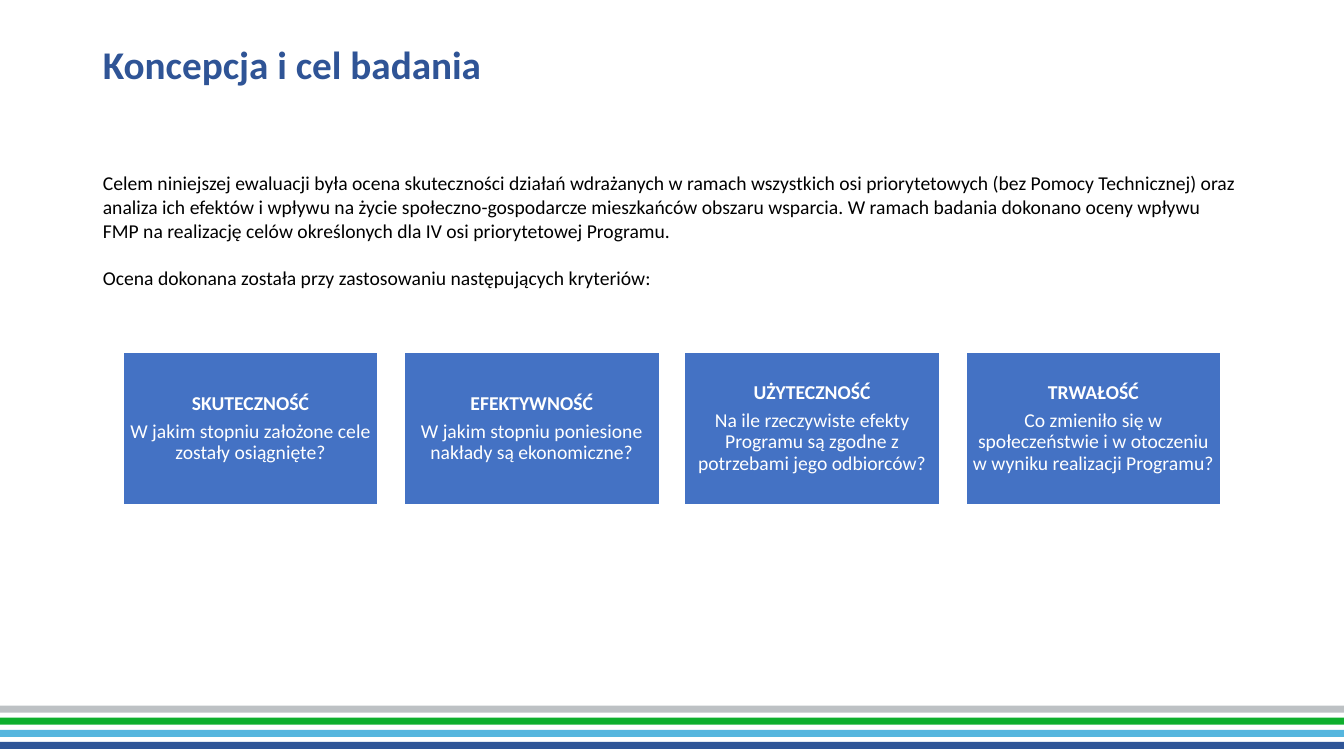
from lxml.etree import SubElement
from pptx import Presentation
from pptx.dml.color import RGBColor
from pptx.enum.shapes import MSO_SHAPE
from pptx.enum.text import MSO_ANCHOR, MSO_AUTO_SIZE, PP_ALIGN
from pptx.oxml.ns import qn
from pptx.util import Emu, Pt

EMU_PER_PX = 9144
SLIDE_WIDTH, SLIDE_HEIGHT = 1333, 750
FONT = "Calibri"

STRIPE_COLOURS = ["BDC1C4", "0EAF2D", "56B6DE", "2F5597"]
TITLE = "Koncepcja i cel badania"
BODY = [
    "Celem niniejszej ewaluacji była ocena skuteczności działań wdrażanych w ramach "
    "wszystkich osi priorytetowych (bez Pomocy Technicznej) oraz analiza ich efektów "
    "i wpływu na życie społeczno-gospodarcze mieszkańców obszaru wsparcia. W ramach "
    "badania dokonano oceny wpływu FMP na realizację celów określonych dla IV osi "
    "priorytetowej Programu.",
    "Ocena dokonana została przy zastosowaniu następujących kryteriów:",
]
CRITERIA = [
    ("SKUTECZNOŚĆ", "W jakim stopniu założone cele zostały osiągnięte?"),
    ("EFEKTYWNOŚĆ", "W jakim stopniu poniesione nakłady są ekonomiczne?"),
    ("UŻYTECZNOŚĆ", "Na ile rzeczywiste efekty Programu są zgodne z potrzebami jego odbiorców?"),
    ("TRWAŁOŚĆ", "Co zmieniło się w społeczeństwie i w otoczeniu w wyniku realizacji Programu?"),
]


def px(length):
    """Turn a length in px into EMU."""
    return Emu(length * EMU_PER_PX)


def colour(value):
    """Turn a hex string into a colour."""
    return RGBColor.from_string(value)


def apply(target, values):
    """Set each attribute in values on target."""
    for name, value in values.items():
        setattr(target, name, value)


def place(shape, box):
    """Move a shape to a box of left, top, width and height in px."""
    apply(shape, dict(zip(("left", "top", "width", "height"), map(px, box))))


def write(paragraph, text, size, hex_colour, bold=False, **formats):
    """Fill a paragraph with one formatted run."""
    apply(paragraph, formats)
    run = paragraph.add_run()
    run.text = text
    apply(run.font, {"name": FONT, "size": Pt(size), "bold": bold})
    run.font.color.rgb = colour(hex_colour)


def add_rectangle(slide, box, fill):
    """Add a plain filled rectangle."""
    shape = slide.shapes.add_shape(MSO_SHAPE.RECTANGLE, *map(px, box))
    shape.shadow.inherit = False
    shape.fill.solid()
    shape.fill.fore_color.rgb = colour(fill)
    shape.line.fill.background()
    return shape


def add_stripes(slide, box):
    """Spread the coloured stripes evenly down the box."""
    left, top, width, height = box
    step = height // len(STRIPE_COLOURS)
    for index, fill in enumerate(STRIPE_COLOURS):
        add_rectangle(slide, (left, top + index * step, width, 7), fill)


def fill_title(slide, box):
    """Place and write the title."""
    title = slide.shapes.title
    place(title, box)
    apply(title.text_frame, {"vertical_anchor": MSO_ANCHOR.MIDDLE,
                             "auto_size": MSO_AUTO_SIZE.NONE, "word_wrap": True})
    write(title.text_frame.paragraphs[0], TITLE, 28, "2F5496", bold=True,
          alignment=PP_ALIGN.LEFT, line_spacing=0.9)


def fill_body(slide, box):
    """Place the body and write its paragraphs without bullets."""
    body = slide.placeholders[1]
    place(body, box)
    frame = body.text_frame
    apply(frame, {"vertical_anchor": MSO_ANCHOR.TOP,
                  "auto_size": MSO_AUTO_SIZE.NONE, "word_wrap": True})
    for index, text in enumerate(BODY):
        paragraph = frame.add_paragraph() if index else frame.paragraphs[0]
        properties = paragraph._p.get_or_add_pPr()
        properties.set("marL", "0")
        properties.set("indent", "0")
        SubElement(properties, qn("a:buNone"))
        write(paragraph, text, 14, "000000", line_spacing=1.0,
              space_before=Pt(17 if index else 0), space_after=Pt(0))


def add_card(slide, box, heading, question):
    """Add one criterion card with its heading and question."""
    card = add_rectangle(slide, box, "4472C4")
    card.line.color.rgb = colour("FFFFFF")
    card.line.width = Pt(1)
    frame = card.text_frame
    apply(frame, {"word_wrap": True, "vertical_anchor": MSO_ANCHOR.MIDDLE})
    apply(frame, {f"margin_{side}": px(6) for side in ("left", "top", "right", "bottom")})
    formats = {"alignment": PP_ALIGN.CENTER, "line_spacing": 0.9, "space_after": Pt(5)}
    write(frame.paragraphs[0], heading, 14, "FFFFFF", bold=True, **formats)
    write(frame.add_paragraph(), question, 14, "FFFFFF", **formats)


def add_cards(slide, box):
    """Lay out the criterion cards in one row with equal gaps."""
    left, top, width, height = box
    card_width = 253
    step = (width - card_width) / (len(CRITERIA) - 1)
    for index, criterion in enumerate(CRITERIA):
        add_card(slide, (left + round(index * step), top, card_width, height), *criterion)


def main():
    """Build the slide and save it."""
    presentation = Presentation()
    apply(presentation, {"slide_width": px(SLIDE_WIDTH), "slide_height": px(SLIDE_HEIGHT)})
    slide = presentation.slides.add_slide(presentation.slide_layouts[1])
    add_stripes(slide, (0, 700, SLIDE_WIDTH, 48))
    fill_title(slide, (92, 34, 1150, 65))
    fill_body(slide, (92, 165, 1150, 476))
    add_cards(slide, (122, 349, 1089, 152))
    presentation.save("out.pptx")


if __name__ == "__main__":
    main()
